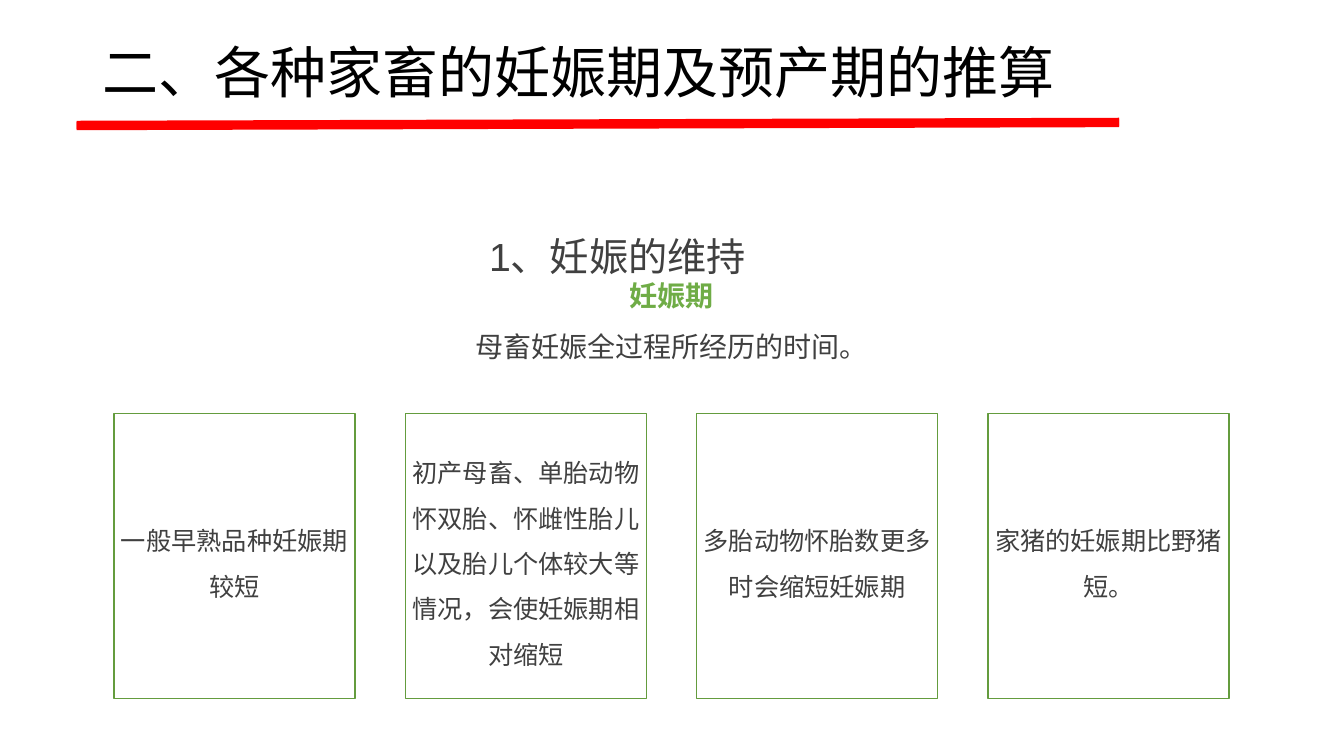
import pptx
import pptx.util
import pptx.dml.color
import pptx.enum.shapes
import pptx.enum.text
import pptx.oxml
import pptx.oxml.ns
from dataclasses import dataclass

Inch, Pt = pptx.util.Inches, pptx.util.Pt
Align = pptx.enum.text.PP_ALIGN
Anchor = pptx.enum.text.MSO_ANCHOR

# Content
TITLE = "二、各种家畜的妊娠期及预产期的推算"
HEAD = ("1", "、妊娠的维持")
TERM = "妊娠期"
MEANING = "母畜妊娠全过程所经历的时间。"
CARDS = [
    "一般早熟品种妊娠期 较短",
    "初产母畜、单胎动物 怀双胎、怀雌性胎儿 以及胎儿个体较大等 情况，会使妊娠期相 对缩短",
    "多胎动物怀胎数更多 时会缩短妊娠期",
    "家猪的妊娠期比野猪 短。",
]


@dataclass(frozen=True)
class Theme:
    font: str = "Noto Sans CJK SC"
    latin: str = "Arial"
    black: str = "000000"
    grey: str = "404040"
    green: str = "6FAC46"
    edge: str = "649C3E"
    red: str = "FF0000"
    title: int = 40
    head: int = 28
    body: int = 20
    card: int = 18


T = Theme()

# Grid, in inches
WIDE, HIGH = 13.33, 7.5
LEFT, TOP, CARD_W, CARD_H = 1.13, 4.1, 2.39, 2.83
STEP = CARD_W + 0.5


def color(code):
    return pptx.dml.color.RGBColor.from_string(code)


def style(run, size, code, face=T.font, bold=False):
    font = run.font
    font.size, font.bold, font.name = Pt(size), bold, face
    font.color.rgb = color(code)
    east = pptx.oxml.parse_xml(
        f'<a:ea {pptx.oxml.ns.nsdecls("a")} typeface="{T.font}"/>')
    run._r.get_or_add_rPr().append(east)


def setup(frame, anchor):
    frame.word_wrap = True
    frame.vertical_anchor = anchor
    frame.margin_left = frame.margin_right = 0
    frame.margin_top = frame.margin_bottom = 0


def rule(slide, rise):
    line = slide.shapes.add_connector(
        pptx.enum.shapes.MSO_CONNECTOR.STRAIGHT,
        Inch(0.76), Inch(1.24 + rise), Inch(11.1), Inch(1.21 + rise))
    line.line.color.rgb = color(T.red)
    line.line.width = Pt(6)
    line._element.spPr.append(pptx.oxml.parse_xml(
        f'<a:effectLst {pptx.oxml.ns.nsdecls("a")}/>'))


def card(slide, col, text):
    box = slide.shapes.add_shape(
        pptx.enum.shapes.MSO_SHAPE.RECTANGLE,
        Inch(LEFT + col * STEP), Inch(TOP), Inch(CARD_W), Inch(CARD_H))
    box.shadow.inherit = False
    box.fill.background()
    box.line.color.rgb = color(T.edge)
    box.line.width = Pt(1)
    setup(box.text_frame, Anchor.MIDDLE)
    box.text_frame.text = text
    para = box.text_frame.paragraphs[0]
    para.alignment = Align.CENTER
    para.line_spacing = Pt(32.4)
    style(para.runs[0], T.card, T.grey)


def main():
    deck = pptx.Presentation()
    deck.slide_width, deck.slide_height = Inch(WIDE), Inch(HIGH)
    slide = deck.slides.add_slide(deck.slide_layouts[5])

    # Title over a red rule
    title = slide.shapes.title
    title.left, title.top = Inch(0.92), Inch(0.02)
    title.width, title.height = Inch(11.5), Inch(1.45)
    title.text_frame.text = TITLE
    title.text_frame.auto_size = pptx.enum.text.MSO_AUTO_SIZE.NONE
    title.text_frame.vertical_anchor = Anchor.MIDDLE
    para = title.text_frame.paragraphs[0]
    para.alignment, para.line_spacing = Align.LEFT, 0.9
    style(para.runs[0], T.title, T.black)
    for rise in (0, 0.01):
        rule(slide, rise)

    # Cards
    for col, text in enumerate(CARDS):
        card(slide, col, text)

    # Heading and definition
    box = slide.shapes.add_textbox(
        Inch(4.7), Inch(2.26), Inch(3.92), Inch(1.33))
    frame = box.text_frame
    setup(frame, Anchor.TOP)
    frame.text = "\n".join(["", TERM, MEANING])
    head, term, meaning = frame.paragraphs
    head.line_spacing = Pt(36.7)
    head._p.get_or_add_pPr().set("marL", str(Inch(0.15)))
    for text, face in zip(HEAD, (T.latin, T.font)):
        run = head.add_run()
        run.text = text
        style(run, T.head, T.grey, face)
    for para in (term, meaning):
        para.alignment = Align.CENTER
        para.line_spacing = Pt(23.3)
    style(term.runs[0], T.body, T.green, bold=True)
    meaning.space_before = Pt(13)
    style(meaning.runs[0], T.body, T.grey)

    deck.save("out.pptx")


if __name__ == "__main__":
    main()
